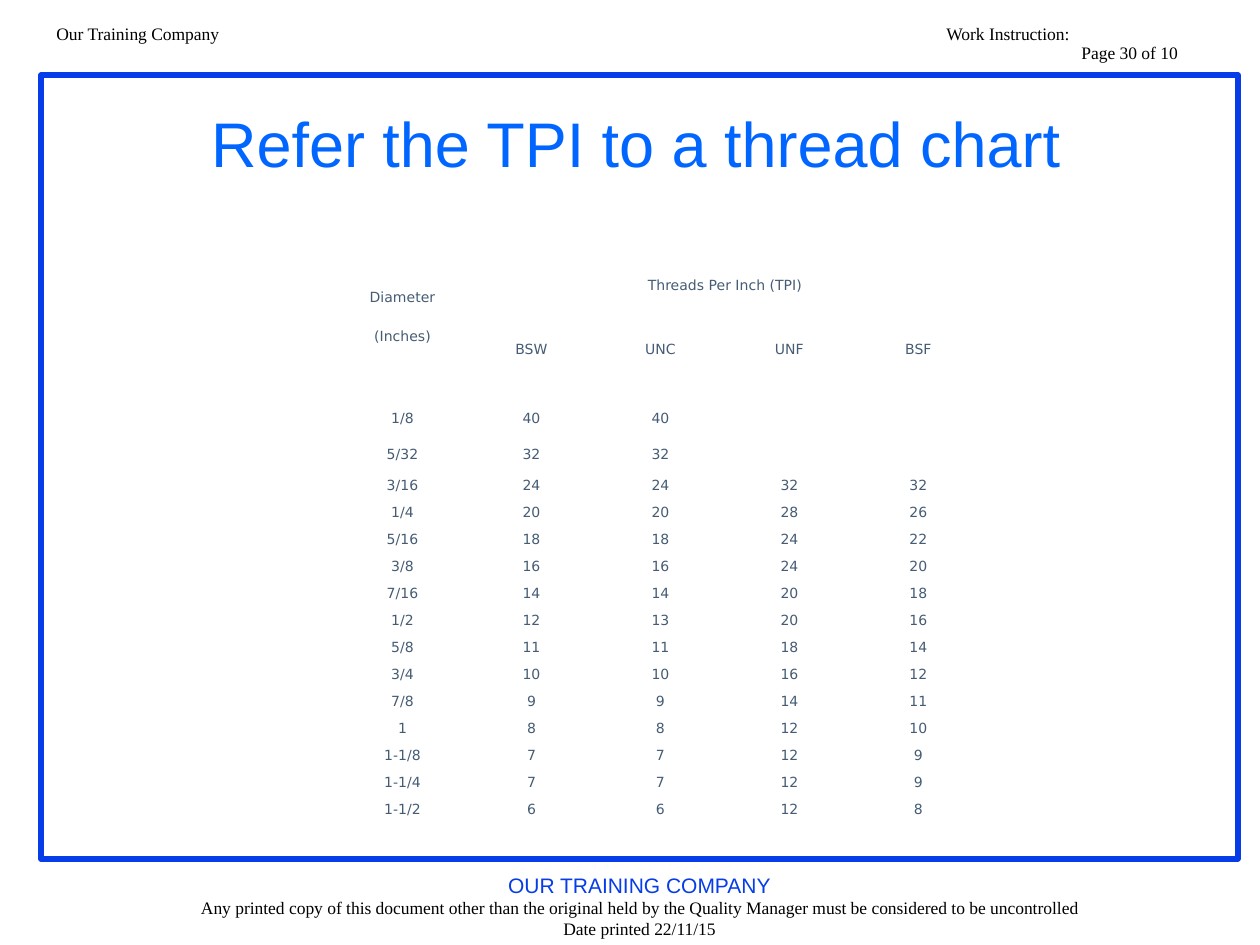
from lxml import etree
from pptx import Presentation
from pptx.dml.color import RGBColor
from pptx.enum.shapes import MSO_SHAPE
from pptx.enum.text import MSO_ANCHOR, PP_ALIGN
from pptx.oxml.ns import qn
from pptx.util import Pt

PX = 914400 // 126
LEFT, CENTER = PP_ALIGN.LEFT, PP_ALIGN.CENTER
TOP, MIDDLE = MSO_ANCHOR.TOP, MSO_ANCHOR.MIDDLE

COLORS = {"frame": "063DE8", "title": "0066FF", "table": "455C74", "text": "000000"}
SANS, SERIF, TABLE_FONT = "Arial", "Times New Roman", "DejaVu Sans"

TITLE = "Refer the TPI to a thread chart"
# text and its tab stop in px from the text edge
HEADER = [("Our Training Company\tWork Instruction:", 890), ("\tPage 30 of 10", 1025)]
FOOTER = [
    ("OUR TRAINING COMPANY", SANS, 12, "frame"),
    ("Any printed copy of this document other than the original held by the "
     "Quality Manager must be considered to be uncontrolled", SERIF, 10, "text"),
    ("Date printed 22/11/15", SERIF, 10, "text"),
]
HEADINGS = [
    ["Diameter\n(Inches)\n\u00a0", "Threads Per Inch (TPI)", "", "", ""],
    ["", "BSW", "UNC", "UNF", "BSF"],
]
THREADS = [
    ["1/8", "40", "40", "", ""],
    ["5/32", "32", "32", "", ""],
    ["3/16", "24", "24", "32", "32"],
    ["1/4", "20", "20", "28", "26"],
    ["5/16", "18", "18", "24", "22"],
    ["3/8", "16", "16", "24", "20"],
    ["7/16", "14", "14", "20", "18"],
    ["1/2", "12", "13", "20", "16"],
    ["5/8", "11", "11", "18", "14"],
    ["3/4", "10", "10", "16", "12"],
    ["7/8", "9", "9", "14", "11"],
    ["1", "8", "8", "12", "10"],
    ["1-1/8", "7", "7", "12", "9"],
    ["1-1/4", "7", "7", "12", "9"],
    ["1-1/2", "6", "6", "12", "8"],
]
COLUMN_WIDTH = 129
ROW_HEIGHTS = [27, 101, 36, 36] + [27] * 13


def px(*lengths):
    return [length * PX for length in lengths]


def style(paragraph, font, size, color, align):
    paragraph.alignment = align
    for run in paragraph.runs:
        run.font.name = font
        run.font.size = Pt(size)
        run.font.color.rgb = RGBColor.from_string(COLORS[color])


def add_text(slide, box, lines, anchor=TOP):
    """Add a text box and return its paragraphs, one for each line."""
    frame = slide.shapes.add_textbox(*px(*box)).text_frame
    frame.word_wrap = True
    frame.vertical_anchor = anchor
    frame.text = "\n".join(lines)
    return frame.paragraphs


def add_tab_stop(paragraph, position):
    tabs = etree.SubElement(paragraph._p.get_or_add_pPr(), qn("a:tabLst"))
    etree.SubElement(tabs, qn("a:tab"), pos=str(position * PX), algn="l")


def fill_cell(cell, text, space_after):
    cell.fill.background()
    cell.vertical_anchor = MIDDLE
    cell.margin_left = cell.margin_right = cell.margin_top = cell.margin_bottom = PX
    cell.text_frame.text = text
    for paragraph in cell.text_frame.paragraphs:
        style(paragraph, TABLE_FONT, 8, "table", CENTER)
        paragraph.line_spacing = Pt(11.2)
        paragraph.space_after = Pt(space_after)
        if not text:
            etree.SubElement(paragraph._p, qn("a:endParaRPr"), sz="800")


def add_thread_table(slide):
    rows = HEADINGS + THREADS
    columns = len(rows[0])
    box = px(338, 271, COLUMN_WIDTH * columns, sum(ROW_HEIGHTS))
    table = slide.shapes.add_table(len(rows), columns, *box).table
    table.first_row = table.horz_banding = False
    for column in table.columns:
        column.width = COLUMN_WIDTH * PX
    for r, (height, row) in enumerate(zip(ROW_HEIGHTS, rows)):
        table.rows[r].height = height * PX
        for c, text in enumerate(row):
            fill_cell(table.cell(r, c), text, 11.2 if r < len(HEADINGS) else 0)
    table.cell(0, 0).merge(table.cell(1, 0))
    table.cell(0, 1).merge(table.cell(0, columns - 1))


def main():
    deck = Presentation()
    deck.slide_width, deck.slide_height = px(1260, 945)
    slide = deck.slides.add_slide(deck.slide_layouts[6])

    frame = slide.shapes.add_shape(MSO_SHAPE.RECTANGLE, *px(41, 75, 1197, 784))
    frame.shadow.inherit = False
    frame.fill.background()
    frame.line.color.rgb = RGBColor.from_string(COLORS["frame"])
    frame.line.width = Pt(3)

    footer = add_text(slide, (44, 866, 1191, 79), [line[0] for line in FOOTER])
    for paragraph, (_, font, size, color) in zip(footer, FOOTER):
        style(paragraph, font, size, color, CENTER)

    header = add_text(slide, (44, 26, 1191, 44), [line[0] for line in HEADER])
    for paragraph, (_, tab_stop) in zip(header, HEADER):
        style(paragraph, SERIF, 10, "text", LEFT)
        paragraph.line_spacing = 0.5
        paragraph.space_before = Pt(5)
        add_tab_stop(paragraph, tab_stop)

    title = add_text(slide, (69, 88, 1134, 108), [TITLE], MIDDLE)
    style(title[0], SANS, 36, "title", CENTER)

    add_thread_table(slide)
    deck.save("out.pptx")


if __name__ == "__main__":
    main()
